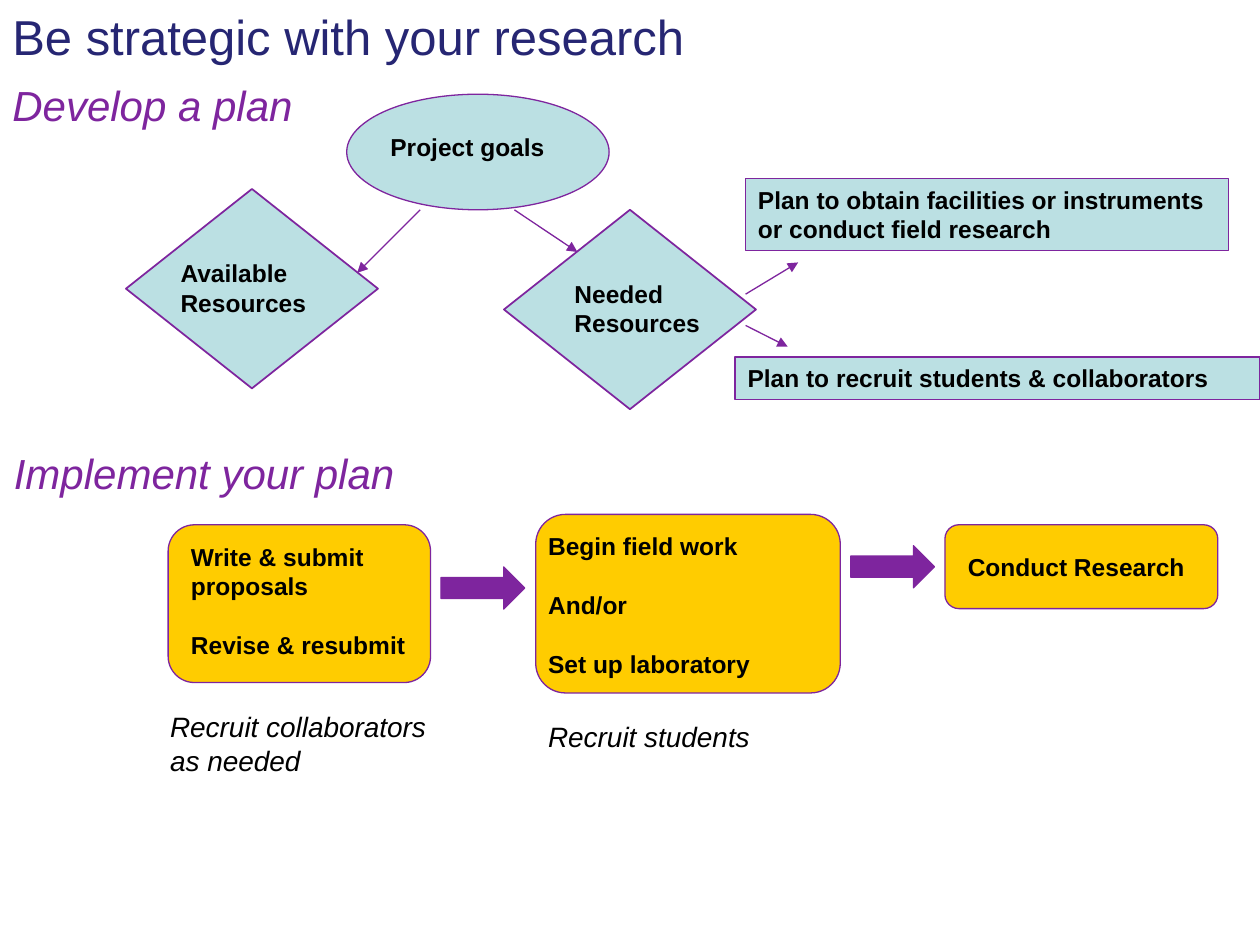
import pptx
import pptx.dml.color
import pptx.enum.shapes
import pptx.enum.text
import pptx.util
import lxml.etree
from dataclasses import dataclass
from pptx.util import Cm, Pt

SHAPE = pptx.enum.shapes.MSO_SHAPE


@dataclass(frozen=True)
class Theme:
    font: str = "Arial"
    purple: str = "7E259E"
    navy: str = "262673"
    black: str = "000000"
    aqua: str = "BBE0E3"
    gold: str = "FFCC00"
    title_size: int = 28
    heading_size: int = 24
    note_size: int = 16
    label_size: int = 14
    thin: float = 0.75
    thick: float = 1
    paragraph_gap: float = 16.9


THEME = Theme()

# All places are left, top, width, height in centimetres.
# Text style: size, colour, bold, italic
STYLES = {
    "title": (THEME.title_size, THEME.navy, False, False),
    "heading": (THEME.heading_size, THEME.purple, False, True),
    "label": (THEME.label_size, THEME.black, True, False),
    "note": (THEME.note_size, THEME.black, False, True),
}

# Preset shape, fill, line width, place
SHAPES = [
    (SHAPE.FLOWCHART_ALTERNATE_PROCESS, THEME.gold, THEME.thin, (19.05, 10.58, 5.5, 1.69)),
    (SHAPE.FLOWCHART_ALTERNATE_PROCESS, THEME.gold, THEME.thin, (3.39, 10.58, 5.29, 3.18)),
    (SHAPE.FLOWCHART_ALTERNATE_PROCESS, THEME.gold, THEME.thin, (10.8, 10.37, 6.14, 3.6)),
    (SHAPE.OVAL, THEME.aqua, THEME.thin, (6.99, 1.9, 5.29, 2.33)),
    (SHAPE.DIAMOND, THEME.aqua, THEME.thick, (2.54, 3.81, 5.08, 4.02)),
    (SHAPE.DIAMOND, THEME.aqua, THEME.thick, (10.16, 4.23, 5.08, 4.02)),
    (SHAPE.RIGHT_ARROW, THEME.purple, THEME.thin, (17.15, 11, 1.69, 0.85)),
    (SHAPE.RIGHT_ARROW, THEME.purple, THEME.thin, (8.89, 11.43, 1.69, 0.85)),
]

PLANS = [
    ("Plan to obtain facilities or instruments or conduct field research",
     (15.03, 3.6, 9.74, 1.45)),
    ("Plan to recruit students & collaborators", (14.82, 7.2, 10.58, 0.86)),
]

# Style, place, groups of lines; groups stand one line apart
TEXTS = [
    ("title", (0, 0, 14.4, 1.45), [["Be strategic with your research"]]),
    ("heading", (0, 1.48, 6.43, 1.27), [["Develop a plan"]]),
    ("heading", (0.03, 8.89, 8.46, 1.27), [["Implement your plan"]]),
    ("label", (7.62, 2.54, 3.63, 0.86), [["Project goals"]]),
    ("label", (3.39, 5.08, 3.07, 1.45), [["Available", "Resources"]]),
    ("label", (11.33, 5.5, 3.07, 1.45), [["Needed", "Resources"]]),
    ("label", (19.26, 11, 4.93, 0.86), [["Conduct Research"]]),
    ("label", (10.8, 10.58, 4.62, 3.25),
     [["Begin field work"], ["And/or"], ["Set up laboratory"]]),
    ("label", (3.6, 10.8, 4.88, 2.64),
     [["Write & submit", "proposals"], ["Revise & resubmit"]]),
    ("note", (3.18, 14.18, 5.87, 1.63), [["Recruit collaborators", "as needed"]]),
    ("note", (10.8, 14.39, 4.78, 0.94), [["Recruit students"]]),
]

# Start x, start y, end x, end y
ARROWS = [
    (8.47, 4.23, 7.2, 5.5),
    (10.37, 4.23, 11.64, 5.08),
    (15.03, 5.93, 16.09, 5.29),
    (15.03, 6.56, 15.88, 6.99),
]


def color(code):
    return pptx.dml.color.RGBColor.from_string(code)


def lengths(values):
    return [Cm(value) for value in values]


def write(box, style, groups, wrap):
    size, ink, bold, italic = STYLES[style]
    frame = box.text_frame
    frame.word_wrap = wrap
    frame.auto_size = pptx.enum.text.MSO_AUTO_SIZE.SHAPE_TO_FIT_TEXT
    frame.vertical_anchor = pptx.enum.text.MSO_ANCHOR.TOP
    lines = [(line, place) for group in groups for place, line in enumerate(group)]
    for index, (line, place) in enumerate(lines):
        para = frame.paragraphs[0] if index == 0 else frame.add_paragraph()
        para.text = line
        para.alignment = pptx.enum.text.PP_ALIGN.LEFT
        if index and place == 0:
            para.space_before = Pt(THEME.paragraph_gap)
        font = para.font
        font.name, font.size, font.bold, font.italic = THEME.font, Pt(size), bold, italic
        font.color.rgb = color(ink)


def add_shape(page, kind, fill, line_width, place):
    shape = page.shapes.add_shape(kind, *lengths(place))
    shape.shadow.inherit = False
    shape.fill.solid()
    shape.fill.fore_color.rgb = color(fill)
    shape.line.color.rgb = color(THEME.purple)
    shape.line.width = Pt(line_width)
    return shape


def add_arrow(page, ends):
    arrow = page.shapes.add_connector(
        pptx.enum.shapes.MSO_CONNECTOR.STRAIGHT, *lengths(ends))
    arrow.line.color.rgb = color(THEME.purple)
    arrow.line.width = Pt(THEME.thin)
    namespace = "{http://schemas.openxmlformats.org/drawingml/2006/main}"
    outline = arrow.line._get_or_add_ln()
    lxml.etree.SubElement(outline, namespace + "tailEnd", type="triangle")
    lxml.etree.SubElement(outline.getparent(), namespace + "effectLst")


def main():
    deck = pptx.Presentation()
    deck.slide_width, deck.slide_height = Cm(25.4), Cm(19.05)
    page = deck.slides.add_slide(deck.slide_layouts[6])
    for shape in SHAPES:
        add_shape(page, *shape)
    for ends in ARROWS:
        add_arrow(page, ends)
    for text, place in PLANS:
        box = add_shape(page, SHAPE.RECTANGLE, THEME.aqua, THEME.thin, place)
        write(box, "label", [[text]], wrap=True)
    for style, place, groups in TEXTS:
        box = page.shapes.add_textbox(*lengths(place))
        write(box, style, groups, wrap=style == "title")
    deck.save("out.pptx")


if __name__ == "__main__":
    main()
